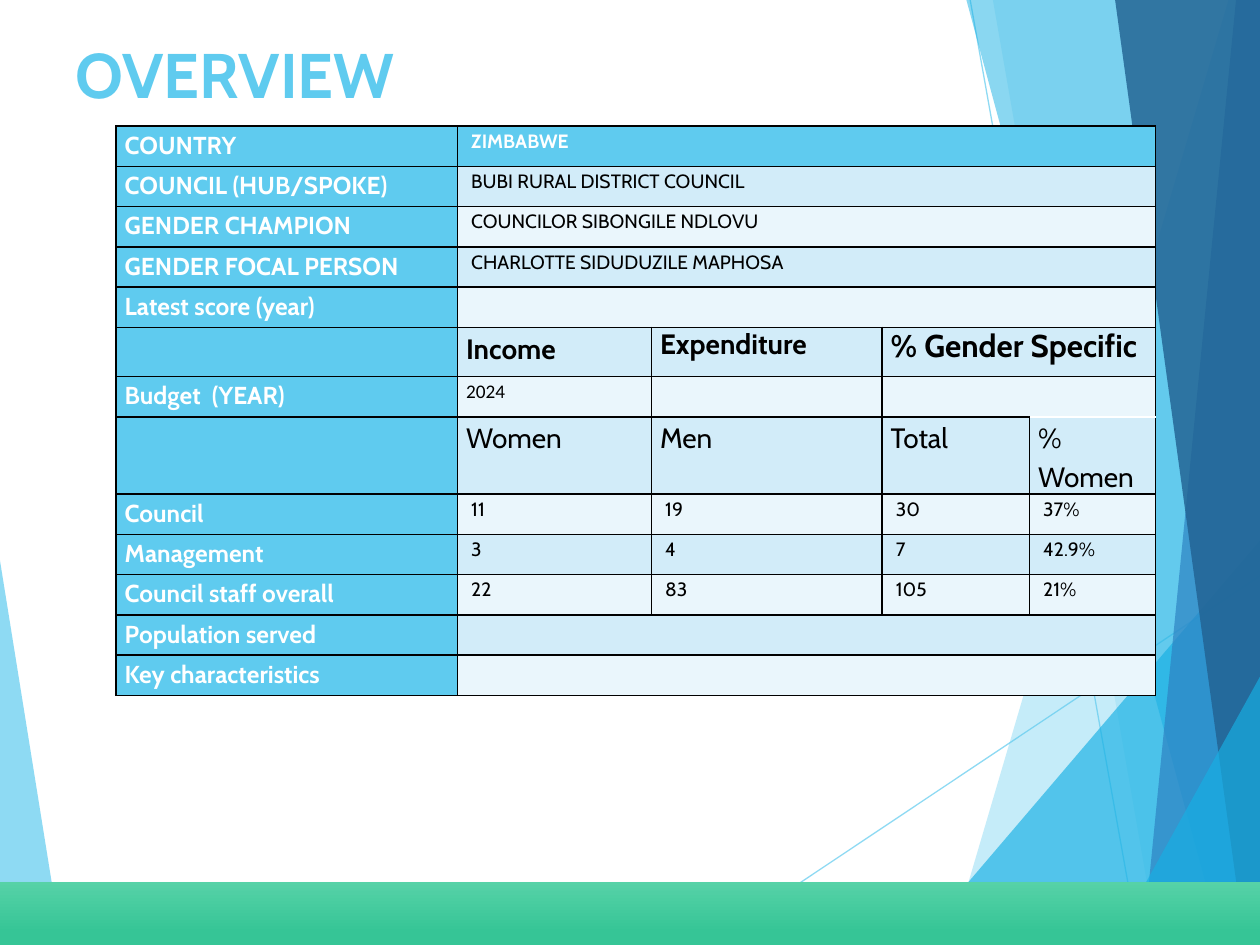
from lxml.etree import SubElement
from pptx import Presentation
from pptx.dml.color import RGBColor
from pptx.enum.shapes import MSO_CONNECTOR, MSO_SHAPE
from pptx.enum.text import MSO_ANCHOR
from pptx.oxml.ns import qn
from pptx.util import Inches, Pt

SKY = RGBColor(0x5F, 0xCB, 0xEF)
AZURE = RGBColor(0x17, 0xB0, 0xE4)
BLUE = RGBColor(0x2E, 0x83, 0xC3)
NAVY = RGBColor(0x22, 0x62, 0x92)
PALE = RGBColor(0xD2, 0xEC, 0xF9)
PALEST = RGBColor(0xEA, 0xF6, 0xFC)
MINT = RGBColor(0x56, 0xD2, 0xA7)
GREEN = RGBColor(0x36, 0xC5, 0x96)
BLACK = RGBColor(0, 0, 0)
WHITE = RGBColor(0xFF, 0xFF, 0xFF)

FACETS = [
    ([(0, 4.45), (0.49, 7.5), (0, 7.5)], SKY, 70),
    ([(9.75, 0), (7.54, 7.5), (10, 7.5), (10, 0)], SKY, 36),
    ([(7.88, 0), (9.19, 7.5), (10, 7.5), (10, 0)], SKY, 20),
    ([(7.26, 7.5), (10, 4.29), (10, 7.5)], AZURE, 66),
    ([(7.67, 0), (9.7, 7.5), (10, 7.5), (10, 0)], AZURE, 50),
    ([(9.81, 0), (9.07, 7.5), (10, 7.5), (10, 0)], BLUE, 70),
    ([(8.85, 0), (9.88, 7.5), (10, 7.5), (10, 0)], NAVY, 82),
    ([(8.82, 7.5), (10, 5.37), (10, 7.5)], AZURE, 66),
]
RAYS = [((5.61, 7.5), (10, 4.57)), ((7.7, 0), (9.04, 7.5))]

COLUMN_WIDTHS = [2.71, 1.54, 1.83, 1.17, 1]
ROW_HEIGHT = 0.32
BUDGET_HEADS, BUDGET, PEOPLE_HEADS = 5, 6, 7
OVERVIEW = [
    ["COUNTRY", "ZIMBABWE"],
    ["COUNCIL (HUB/SPOKE)", "BUBI RURAL DISTRICT COUNCIL"],
    ["GENDER CHAMPION", "COUNCILOR SIBONGILE NDLOVU"],
    ["GENDER FOCAL PERSON", "CHARLOTTE SIDUDUZILE MAPHOSA"],
    ["Latest score (year)", ""],
    ["", "Income", "Expenditure", "% Gender Specific"],
    ["Budget  (YEAR)", "2024", "", ""],
    ["", "Women", "Men", "Total", "% Women"],
    ["Council", "11", "19", "30", "37%"],
    ["Management", "3", "4", "7", "42.9%"],
    ["Council staff overall", "22", "83", "105", "21%"],
    ["Population served", ""],
    ["Key characteristics", ""],
]


def write_text(frame, text, size=11, color=BLACK, bold=False, font="Cabin", spacing=1.15):
    paragraph = frame.paragraphs[0]
    paragraph.line_spacing = spacing
    if not text:
        paragraph.font.size = Pt(size)
        return
    run = paragraph.add_run()
    run.text = text
    run.font.name = font
    run.font.size = Pt(size)
    run.font.bold = bold
    run.font.color.rgb = color


def set_opacity(properties, percent):
    for color in properties.iter(qn("a:srgbClr")):
        SubElement(color, qn("a:alpha"), val=str(percent * 1000))


def add_facet(slide, points, color, opacity):
    corners = [(Inches(x), Inches(y)) for x, y in points]
    builder = slide.shapes.build_freeform(*corners[0])
    builder.add_line_segments(corners[1:])
    facet = builder.convert_to_shape()
    facet.shadow.inherit = False
    facet.fill.solid()
    facet.fill.fore_color.rgb = color
    facet.line.fill.background()
    set_opacity(facet._element.spPr, opacity)


def add_ray(slide, start, end):
    ray = slide.shapes.add_connector(
        MSO_CONNECTOR.STRAIGHT, *(Inches(value) for value in start + end))
    ray.line.color.rgb = SKY
    ray.line.width = Pt(0.75)
    set_opacity(ray._element.spPr, 70)
    SubElement(ray._element.spPr, qn("a:effectLst"))


def add_title(slide, text):
    title = slide.shapes.add_textbox(Inches(0.5), Inches(0.17), Inches(9), Inches(0.83))
    title.text_frame.word_wrap = True
    title.text_frame.vertical_anchor = MSO_ANCHOR.MIDDLE
    write_text(title.text_frame, text, size=36, color=SKY, bold=True, spacing=1)


def set_borders(cell, top=BLACK):
    properties = cell._tc.get_or_add_tcPr()
    for side, color in (("lnL", BLACK), ("lnR", BLACK), ("lnT", top), ("lnB", BLACK)):
        border = SubElement(properties, qn(f"a:{side}"), w=str(Pt(1)))
        fill = SubElement(border, qn("a:solidFill"))
        SubElement(fill, qn("a:srgbClr"), val=str(color))


def text_format(row, column):
    if column == 0:
        return {"size": 14, "color": WHITE, "bold": True}
    if row == 0:
        return {"color": WHITE, "bold": True}
    if row == BUDGET_HEADS:
        return {"size": 18 if column == 3 else 16, "bold": True,
                "spacing": 1.15 if column == 1 else 1}
    if row == BUDGET:
        return {"font": "Calibri"}
    if row == PEOPLE_HEADS:
        return {"size": 16}
    return {}


def style_cell(cell, row, column):
    set_borders(cell, top=WHITE if (row, column) == (PEOPLE_HEADS, 4) else BLACK)
    flush = column == 0 or row in (BUDGET_HEADS, BUDGET, PEOPLE_HEADS)
    cell.margin_left = Inches(0.07 if flush else 0.11)
    cell.margin_right = Inches(0.07)
    cell.margin_top = cell.margin_bottom = 0
    cell.fill.solid()
    if column == 0 or row == 0:
        cell.fill.fore_color.rgb = SKY
    else:
        cell.fill.fore_color.rgb = PALE if row % 2 else PALEST


def add_overview_table(slide):
    table = slide.shapes.add_table(
        len(OVERVIEW), len(COLUMN_WIDTHS), Inches(0.92), Inches(1),
        Inches(sum(COLUMN_WIDTHS)), Inches(ROW_HEIGHT * len(OVERVIEW))).table
    for column, width in zip(table.columns, COLUMN_WIDTHS):
        column.width = Inches(width)
    last = len(COLUMN_WIDTHS) - 1
    for row, entries in enumerate(OVERVIEW):
        table.rows[row].height = Inches(0.39 if row == BUDGET_HEADS else ROW_HEIGHT)
        for column in range(len(COLUMN_WIDTHS)):
            style_cell(table.cell(row, column), row, column)
        for column, text in enumerate(entries):
            write_text(table.cell(row, column).text_frame, text, **text_format(row, column))
        if len(entries) <= last:
            table.cell(row, len(entries) - 1).merge(table.cell(row, last))


def add_footer_band(slide):
    band = slide.shapes.add_shape(
        MSO_SHAPE.RECTANGLE, 0, Inches(7), Inches(10.21), Inches(0.51))
    band.line.fill.background()
    band.fill.gradient()
    band.fill.gradient_angle = 270
    for stop, color, position in zip(band.fill.gradient_stops, (MINT, GREEN), (0, 0.78)):
        stop.color.rgb = color
        stop.position = position
    band.shadow.inherit = False
    effects = band._element.spPr.find(qn("a:effectLst"))
    shadow = SubElement(effects, qn("a:outerShdw"), blurRad=str(Pt(4)),
                        dist=str(Pt(3)), dir="5400000", rotWithShape="0")
    set_opacity_color = SubElement(shadow, qn("a:srgbClr"), val=str(BLACK))
    SubElement(set_opacity_color, qn("a:alpha"), val="35000")


def main():
    presentation = Presentation()
    presentation.slide_width = Inches(10)
    presentation.slide_height = Inches(7.5)
    slide = presentation.slides.add_slide(presentation.slide_layouts[6])
    for start, end in RAYS:
        add_ray(slide, start, end)
    for points, color, opacity in FACETS:
        add_facet(slide, points, color, opacity)
    add_title(slide, "OVERVIEW")
    add_overview_table(slide)
    add_footer_band(slide)
    presentation.save("out.pptx")


if __name__ == "__main__":
    main()
